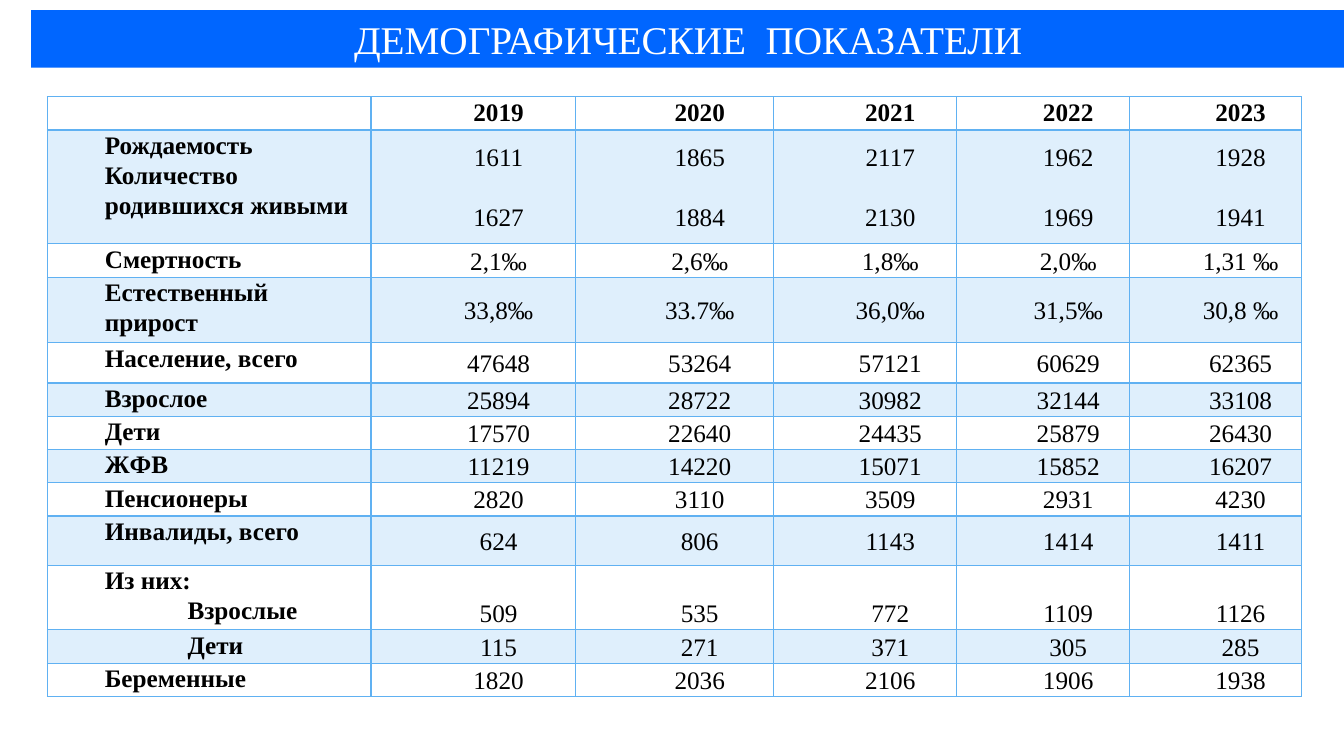
import lxml.etree
import pptx
import pptx.dml.color
import pptx.enum.text
import pptx.oxml.ns
import pptx.util

Inches, Pt = pptx.util.Inches, pptx.util.Pt
RGBColor = pptx.dml.color.RGBColor
ALIGN = pptx.enum.text.PP_ALIGN
ANCHOR = pptx.enum.text.MSO_ANCHOR
qn = pptx.oxml.ns.qn

BLUE = RGBColor(0x00, 0x66, 0xFF)
SKY = RGBColor(0x60, 0xB1, 0xF2)
WHITE = RGBColor(0xFF, 0xFF, 0xFF)
BLACK = RGBColor(0x00, 0x00, 0x00)
FONT = "Times New Roman"
INDENT, DEEP = 0.5, 1.32
GAP = 21.4  # one text line, in points

COLS = [3.21, 2.03, 1.96, 1.82, 1.71, 1.71]
LOW = 0.33
YEARS = ["", "2019", "2020", "2021", "2022", "2023"]
# row height, then label and yearly values
ROWS = [
    (LOW, YEARS),
    (1.13, ["Рождаемость\nКоличество родившихся живыми", "1611\n1627",
            "1865\n1884", "2117\n2130", "1962\n1969", "1928\n1941"]),
    (LOW, ["Смертность", "2,1‰", "2,6‰", "1,8‰", "2,0‰", "1,31 ‰"]),
    (0.65, ["Естественный прирост", "33,8‰", "33.7‰", "36,0‰", "31,5‰", "30,8 ‰"]),
    (0.4, ["Население, всего", "47648", "53264", "57121", "60629", "62365"]),
    (LOW, ["Взрослое", "25894", "28722", "30982", "32144", "33108"]),
    (LOW, ["Дети", "17570", "22640", "24435", "25879", "26430"]),
    (LOW, ["ЖФВ", "11219", "14220", "15071", "15852", "16207"]),
    (LOW, ["Пенсионеры", "2820", "3110", "3509", "2931", "4230"]),
    (0.49, ["Инвалиды, всего", "624", "806", "1143", "1414", "1411"]),
    (0.64, ["Из них:\nВзрослые", "509", "535", "772", "1109", "1126"]),
    (LOW, ["Дети", "115", "271", "371", "305", "285"]),
    (LOW, ["Беременные", "1820", "2036", "2106", "1906", "1938"]),
]
SPLIT, PART, CHILD = 1, 10, 11  # rows with special layout


def style(par, size, color, bold=False):
    for run in par.runs:
        font = run.font
        font.name, font.size, font.bold = FONT, Pt(size), bold
        font.color.rgb = color


def title(slide, box):
    bar = slide.shapes.title
    bar.left, bar.top, bar.width, bar.height = map(Inches, box)
    bar.fill.solid()
    bar.fill.fore_color.rgb = BLUE
    frame = bar.text_frame
    frame.text = "ДЕМОГРАФИЧЕСКИЕ  ПОКАЗАТЕЛИ"
    frame.auto_size = pptx.enum.text.MSO_AUTO_SIZE.NONE
    frame.vertical_anchor = ANCHOR.MIDDLE
    par = frame.paragraphs[0]
    par.alignment, par.line_spacing = ALIGN.CENTER, 1.0
    style(par, 28, WHITE)


def edge(cell, row):
    """Draw the four borders; the line under the years is thicker."""
    props = cell._tc.get_or_add_tcPr()
    for spot, side in enumerate(("lnL", "lnR", "lnT", "lnB")):
        thick = (row, side) in ((0, "lnB"), (1, "lnT"))
        line = lxml.etree.Element(qn("a:" + side), w=str(Pt(2 if thick else 1)))
        fill = lxml.etree.SubElement(line, qn("a:solidFill"))
        lxml.etree.SubElement(fill, qn("a:srgbClr"), val=str(SKY))
        props.insert(spot, line)


def shade(cell, row):
    """Tint odd rows with 20 % of the sky colour."""
    if row % 2 == 0:
        cell.fill.background()
        return
    cell.fill.solid()
    cell.fill.fore_color.rgb = SKY
    tint = cell._tc.tcPr.find(".//" + qn("a:srgbClr"))
    lxml.etree.SubElement(tint, qn("a:alpha"), val="20000")


def write(cell, text, row, col):
    cell.margin_left = cell.margin_right = Inches(0.07)
    cell.margin_top = cell.margin_bottom = 0
    if row and col:
        cell.vertical_anchor = ANCHOR.BOTTOM if row == PART else ANCHOR.MIDDLE
        if row == PART:
            cell.margin_bottom = Inches(0.02)
    cell.text_frame.text = text
    for index, par in enumerate(cell.text_frame.paragraphs):
        par.alignment = ALIGN.CENTER if col else ALIGN.LEFT
        par.line_spacing = 1.07
        if index and col and row == SPLIT:
            par.space_before = Pt(GAP)
        deep = col == 0 and (row == CHILD or (row == PART and index))
        props = par._p.get_or_add_pPr()
        props.set("marL", str(Inches(DEEP if deep else INDENT)))
        props.set("indent", "0")
        style(par, 18, BLACK, row == 0 or col == 0)


def grid(slide, left, top):
    tall = sum(height for height, _ in ROWS)
    frame = slide.shapes.add_table(len(ROWS), len(COLS), Inches(left), Inches(top),
                                   Inches(sum(COLS)), Inches(tall))
    table = frame.table
    table.first_row = table.horz_banding = False
    for col, width in enumerate(COLS):
        table.columns[col].width = Inches(width)
    for row, (height, texts) in enumerate(ROWS):
        table.rows[row].height = Inches(height)
        for col, text in enumerate(texts):
            cell = table.cell(row, col)
            write(cell, text, row, col)
            shade(cell, row)
            edge(cell, row)


def main():
    deck = pptx.Presentation()
    deck.slide_width, deck.slide_height = Inches(13.33), Inches(7.5)
    slide = deck.slides.add_slide(deck.slide_layouts[5])
    title(slide, (0.31, 0.1, 13.03, 0.57))
    grid(slide, 0.47, 0.96)
    deck.save("out.pptx")


if __name__ == "__main__":
    main()
